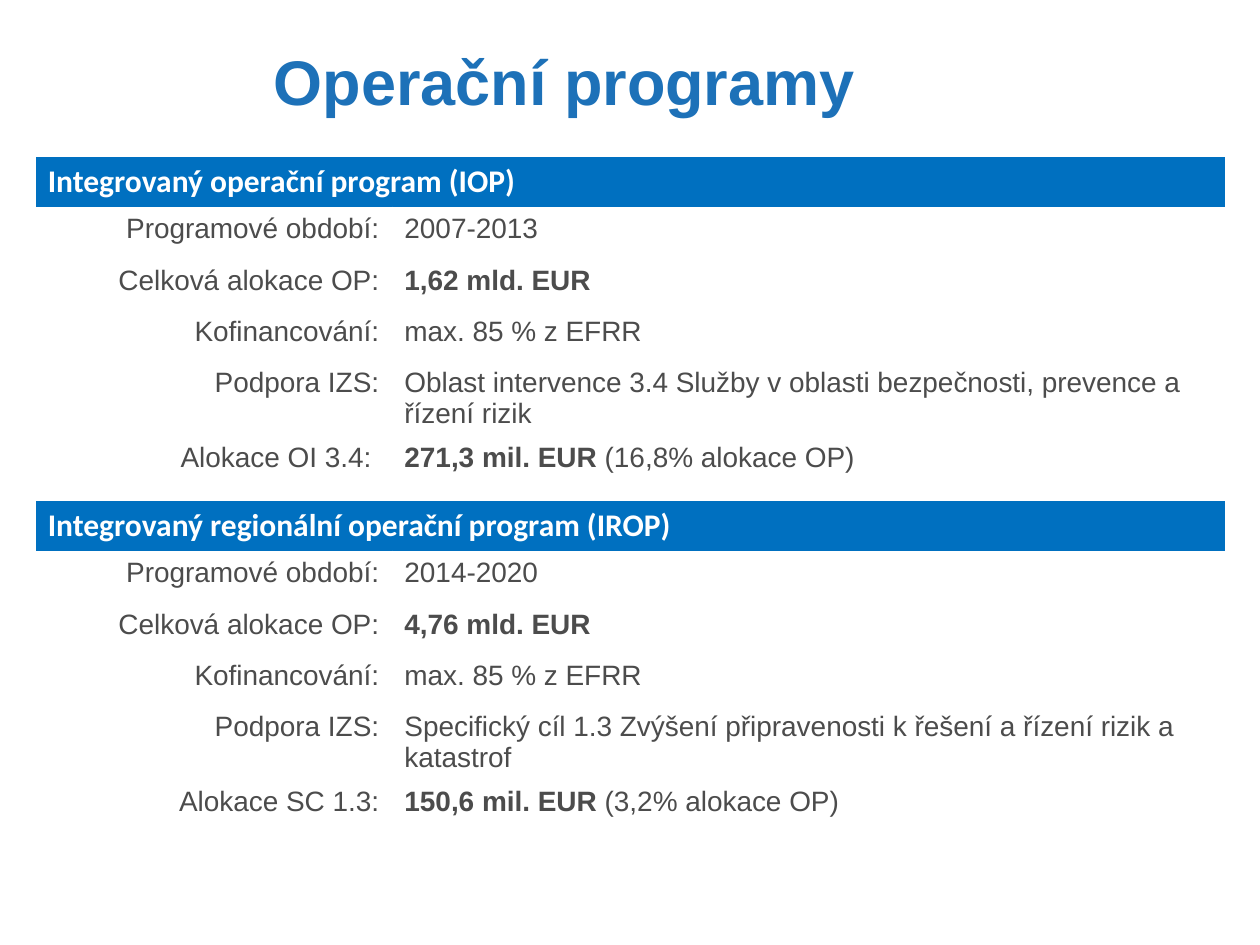
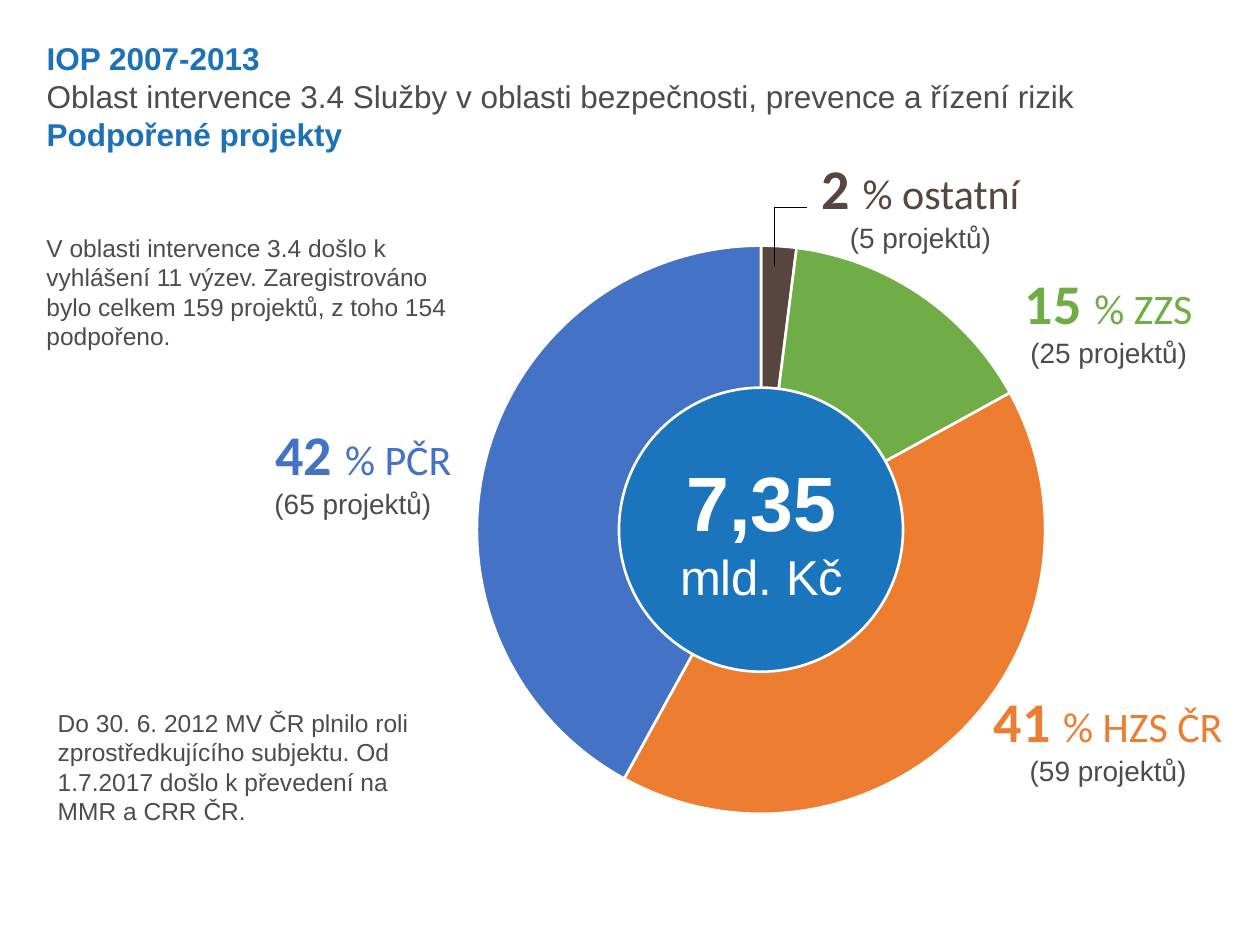
"""Build two slides on the IOP and IROP operational programmes."""
from dataclasses import dataclass
from lxml.etree import SubElement
from pptx import Presentation
from pptx.chart.data import CategoryChartData
from pptx.dml.color import RGBColor
from pptx.enum.chart import XL_CHART_TYPE
from pptx.enum.shapes import MSO_CONNECTOR, MSO_SHAPE
from pptx.enum.text import MSO_ANCHOR, MSO_AUTO_SIZE, PP_ALIGN
from pptx.oxml import parse_xml
from pptx.oxml.ns import nsdecls, qn
from pptx.util import Inches, Pt


@dataclass(frozen=True)
class Theme:
    blue: str = "1D71B8"
    band: str = "0070C0"
    core: str = "1B75BC"
    edge: str = "325491"
    gray: str = "4C4C4C"
    white: str = "FFFFFF"
    black: str = "000000"
    other: str = "57463F"
    green: str = "70AD47"
    orange: str = "ED7D31"
    police: str = "4472C4"
    sans: str = "Arial"
    alt: str = "Calibri"
    title: int = 36
    total: int = 44
    share: int = 32
    unit: int = 28
    group: int = 24
    head: int = 18
    body: int = 16
    note: int = 14


theme = Theme()
LEFT, MID, RIGHT = PP_ALIGN.LEFT, PP_ALIGN.CENTER, PP_ALIGN.RIGHT
deck = Presentation()
deck.slide_width, deck.slide_height = Inches(10), Inches(7.5)
COL, ROW = deck.slide_width / 100, deck.slide_height / 75


def grid(left, top, cols, rows):
    """Turn grid columns and rows into slide lengths."""
    return [round(n * step) for n, step in zip((left, top, cols, rows), (COL, ROW, COL, ROW))]


def write(frame, lines, wrap=True):
    """Fill a frame with lines of (align, runs of text, size, colour, bold, font)."""
    frame.word_wrap = wrap
    frame.auto_size = MSO_AUTO_SIZE.NONE
    for i, (align, runs) in enumerate(lines):
        para = frame.paragraphs[0] if i == 0 else frame.add_paragraph()
        para.alignment = align
        for text, size, color, bold, face in runs:
            run = para.add_run()
            run.text = text
            run.font.size, run.font.bold, run.font.name = Pt(size), bold, face
            run.font.color.rgb = RGBColor.from_string(color)


plan, result = [deck.slides.add_slide(deck.slide_layouts[5]) for _ in range(2)]
titles = [
    (plan, grid(20.5, 2.9, 48.6, 7.1), False,
     [(MID, [("Operační programy", theme.title, theme.blue, True, theme.sans)])]),
    (result, grid(2.7, 2.6, 96.2, 10.1), True,
     [(LEFT, [(text, theme.head, color, bold, theme.sans)]) for text, color, bold in (
         ("IOP 2007-2013", theme.blue, True),
         ("Oblast intervence 3.4 Služby v oblasti bezpečnosti, prevence a řízení rizik", theme.gray, False),
         ("Podpořené projekty", theme.blue, True))]),
]
for slide, box, wrap, lines in titles:
    title = slide.shapes.title
    title.left, title.top, title.width, title.height = box
    title.text_frame.vertical_anchor = MSO_ANCHOR.TOP
    write(title.text_frame, lines, wrap)

programs = [
    ("Integrovaný operační program (IOP)", "2007-2013", "1,62 mld. EUR",
     "Oblast intervence 3.4 Služby v oblasti bezpečnosti, prevence a řízení rizik",
     "Alokace OI 3.4: ", "271,3 mil. EUR ", "(16,8% alokace OP)"),
    ("Integrovaný regionální operační program (IROP)", "2014-2020", "4,76 mld. EUR",
     "Specifický cíl 1.3 Zvýšení připravenosti k řešení a řízení rizik a katastrof",
     "Alokace SC 1.3:", "150,6 mil. EUR ", "(3,2% alokace OP)"),
]
for i, (name, years, total, aid, label, money, share) in enumerate(programs):
    rows = [
        ("Programové období:", [(years, False)]),
        ("Celková alokace OP:", [(total, True)]),
        ("Kofinancování:", [("max. 85 % z EFRR", False)]),
        ("Podpora IZS:", [(aid, False)]),
        (label, [(money, True), (share, False)]),
    ]
    box = grid(2.8, 12.4 + 27.3 * i, 94.5, 4.06 * 6)
    table = plan.shapes.add_table(6, 2, *box).table
    table.columns[0].width, table.columns[1].width = round(28.3 * COL), round(66.2 * COL)
    head = table.cell(0, 0)
    head.merge(table.cell(0, 1))
    head.fill.solid()
    head.fill.fore_color.rgb = RGBColor.from_string(theme.band)
    write(head.text_frame, [(LEFT, [(name, theme.head, theme.white, True, theme.alt)])])
    for r, (key, value) in enumerate(rows, 1):
        for c, (align, parts) in enumerate(((RIGHT, [(key, False)]), (LEFT, value))):
            cell = table.cell(r, c)
            cell.fill.background()
            write(cell.text_frame, [(align, [
                (text, theme.body, theme.gray, bold, theme.sans) for text, bold in parts])])

core = result.shapes.add_shape(MSO_SHAPE.OVAL, *grid(48.1, 29.7, 24.7, 24.7))
core.shadow.inherit = False
core.fill.solid()
core.fill.fore_color.rgb = RGBColor.from_string(theme.core)
core.line.color.rgb = RGBColor.from_string(theme.edge)
core.line.width = Pt(1)
core.text_frame.vertical_anchor = MSO_ANCHOR.MIDDLE
write(core.text_frame, [(MID, [
    ("7,35", theme.total, theme.white, True, theme.sans),
    (" ", theme.head, theme.white, False, theme.sans),
    ("mld. Kč", theme.unit, theme.white, False, theme.sans)])])

groups = [
    (2, "ostatní", 5, theme.other, MID, (64.1, 11.7, 17.9, 9.4)),
    (15, "ZZS", 25, theme.green, MID, (80.3, 20.8, 15.4, 9.4)),
    (41, "HZS ČR", 59, theme.orange, MID, (77.8, 54, 20.3, 9.4)),
    (42, "PČR", 65, theme.police, LEFT, (20.8, 32.8, 16.1, 9.4)),
]
for share, name, count, color, align, box in groups:
    label = result.shapes.add_textbox(*grid(*box))
    write(label.text_frame, [
        (MID, [(f"{share} ", theme.share, color, True, theme.alt),
               (f"% {name}", theme.group, color, False, theme.alt)]),
        (align, [(f"({count} projektů)", theme.body, theme.gray, False, theme.sans)])], False)

notes = [
    ("V oblasti intervence 3.4 došlo k vyhlášení 11 výzev. Zaregistrováno bylo celkem "
     "159 projektů, z toho 154 podpořeno.", (2.7, 18, 34.2, 10.4)),
    ("Do 30. 6. 2012 MV ČR plnilo roli zprostředkujícího subjektu. Od 1.7.2017 došlo "
     "k převedení na MMR a CRR ČR.", (3.6, 55.7, 32.2, 10.4)),
]
for text, box in notes:
    note = result.shapes.add_textbox(*grid(*box))
    write(note.text_frame, [(LEFT, [(text, theme.note, theme.gray, False, theme.sans)])])

data = CategoryChartData()
data.categories = [str(n) for n in range(1, len(groups) + 1)]
data.add_series("Series 1", [group[0] for group in groups])
chart = result.shapes.add_chart(XL_CHART_TYPE.DOUGHNUT, *grid(32.9, 18, 55, 48.1), data).chart
chart.has_legend = chart.has_title = False
chart.font.name, chart.font.size = theme.alt, Pt(10)
chart.font.color.rgb = RGBColor.from_string(theme.black)
ring = chart.plots[0]
ring.vary_by_categories = True
for i, group in enumerate(groups):
    form = ring.series[0].points[i].format
    form.fill.solid()
    form.fill.fore_color.rgb = RGBColor.from_string(group[3])
    form.line.color.rgb = RGBColor.from_string(theme.white)
    form.line.width = Pt(1.5)
root = chart.element
root.find(qn("c:chart")).addnext(parse_xml(
    f'<c:spPr {nsdecls("c", "a")}><a:noFill/><a:ln><a:noFill/></a:ln></c:spPr>'))
next(root.iter(qn("c:holeSize"))).set("val", "55")
area = next(root.iter(qn("c:plotArea")))
for old in area.findall(qn("c:layout")):
    area.remove(old)
area.insert(0, parse_xml(
    f'<c:layout {nsdecls("c")}><c:manualLayout><c:layoutTarget val="inner"/>'
    '<c:xMode val="edge"/><c:yMode val="edge"/><c:x val="0.09"/><c:y val="0.03"/>'
    '<c:w val="0.82"/><c:h val="0.94"/></c:manualLayout></c:layout>'))

lead = result.shapes.add_connector(MSO_CONNECTOR.ELBOW, *grid(65.1, 20.1, 60.4, 17.5))
lead.line.color.rgb = RGBColor.from_string(theme.black)
lead.line.width = Pt(0.5)
props = lead.element.spPr
props.find(qn("a:xfrm")).set("rot", "5400000")
props.find(qn("a:prstGeom")).set("prst", "bentConnector2")
SubElement(props, qn("a:effectLst"))

deck.save("out.pptx")
